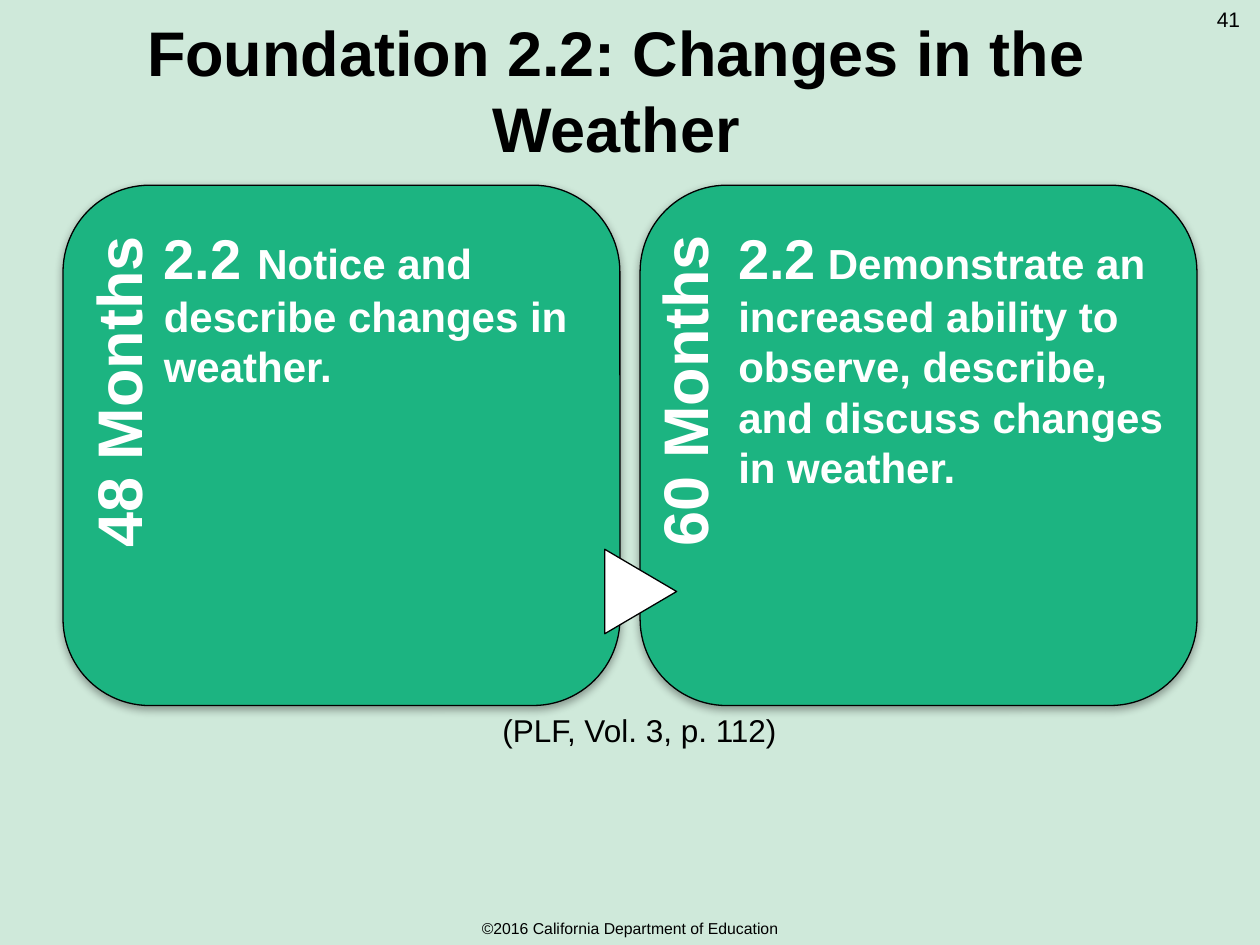
"""Build the slide on Foundation 2.2, comparing 48 and 60 months."""
from lxml import etree
from pptx import Presentation
from pptx.dml.color import RGBColor
from pptx.enum.shapes import MSO_SHAPE
from pptx.enum.text import MSO_ANCHOR, MSO_AUTO_SIZE, PP_ALIGN
from pptx.oxml.ns import qn
from pptx.util import Inches, Pt

ROUNDED, TRIANGLE = MSO_SHAPE.ROUNDED_RECTANGLE, MSO_SHAPE.FLOWCHART_EXTRACT
TOP, MIDDLE, BOTTOM = MSO_ANCHOR.TOP, MSO_ANCHOR.MIDDLE, MSO_ANCHOR.BOTTOM
LEFT, CENTER, RIGHT = PP_ALIGN.LEFT, PP_ALIGN.CENTER, PP_ALIGN.RIGHT
NO_AUTOFIT = MSO_AUTO_SIZE.NONE
COMPARISON_LAYOUT = 4
COLORS = {"background": "CFE9DA", "panel": "1CB481", "black": "000000", "white": "FFFFFF"}


def color(name):
    """Return the named palette colour."""
    return RGBColor.from_string(COLORS[name])


def place(shape, box, rotation=0):
    """Move, size and turn a shape, with the box in inches."""
    for name, value in zip(("left", "top", "width", "height"), box):
        setattr(shape, name, Inches(value))
    shape.rotation = rotation


def write(shape, runs, color_name="black", bold=False, align=LEFT, anchor=TOP, indent=0):
    """Fill a shape with one paragraph of (text, size) runs."""
    frame = shape.text_frame
    frame_format = {"word_wrap": True, "auto_size": NO_AUTOFIT, "vertical_anchor": anchor}
    for name, value in frame_format.items():
        setattr(frame, name, value)
    paragraph = frame.paragraphs[0]
    properties = paragraph._p.get_or_add_pPr()
    properties.set("marL", str(Inches(indent)))
    properties.set("indent", "0")
    etree.SubElement(properties, qn("a:buNone"))
    paragraph.alignment = align
    paragraph.space_before = Pt(0)
    for text, size in runs:
        run = paragraph.add_run()
        run.text = text
        for name, value in {"name": "Arial", "size": Pt(size), "bold": bold}.items():
            setattr(run.font, name, value)
        run.font.color.rgb = color(color_name)


def add_label(slide, text, size, box, anchor=TOP):
    """Add a centred text box."""
    label = slide.shapes.add_textbox(*map(Inches, box))
    write(label, [(text, size)], align=CENTER, anchor=anchor)


def add_figure(slide, kind, box, fill, rotation=0):
    """Add a filled preset shape with a thin black outline."""
    shape = slide.shapes.add_shape(kind, *map(Inches, box))
    shape.rotation = rotation
    shape.shadow.inherit = False
    shape.fill.solid()
    shape.fill.fore_color.rgb = color(fill)
    shape.line.color.rgb = color("black")
    shape.line.width = Pt(0.75)
    return shape


def add_panel(slide, left):
    """Add a rounded panel with a soft shadow, behind the placeholders."""
    panel = add_figure(slide, ROUNDED, (left, 1.47, 4.42, 4.13), "panel")
    effects = panel._element.spPr.find(qn("a:effectLst"))
    shadow = etree.SubElement(effects, qn("a:outerShdw"), blurRad=str(Pt(5)),
                              dist=str(Pt(1.8)), dir="5400000", rotWithShape="0")
    shade = etree.SubElement(shadow, qn("a:srgbClr"), val=COLORS["black"])
    etree.SubElement(shade, qn("a:alpha"), val="35000")
    slide.shapes._spTree.insert(2, panel._element)


def fill_column(heading, body, age, age_box, runs, body_box, indent=0):
    """Write a turned age heading and the foundation text beside it."""
    place(heading, age_box, 270)
    write(heading, [(age, 36)], "white", True, RIGHT, BOTTOM)
    place(body, body_box)
    write(body, runs, "white", True, indent=indent)


def main():
    """Build and save the slide."""
    presentation = Presentation()
    presentation.slide_width, presentation.slide_height = Inches(10), Inches(7.5)
    slide = presentation.slides.add_slide(presentation.slide_layouts[COMPARISON_LAYOUT])
    slide.background.fill.solid()
    slide.background.fill.fore_color.rgb = color("background")
    title, *columns = slide.placeholders

    for left in (0.5, 5.08):
        add_panel(slide, left)
    place(title, (0.28, 0, 9.22, 1.42))
    write(title, [("Foundation 2.2: Changes in the Weather", 36)],
          bold=True, align=CENTER, anchor=MIDDLE)
    fill_column(*columns[:2], "48 Months", (-0.55, 2.82, 2.88, 0.79),
                [("2.2 ", 32), ("Notice and describe changes in weather.", 24)],
                (1.2, 1.72, 3.72, 3.31))
    fill_column(*columns[2:], "60 Months", (3.98, 2.86, 2.89, 0.7),
                [("2.2", 32), (" Demonstrate an increased ability to observe, describe, "
                               "and discuss changes in weather.", 24)],
                (5.26, 1.72, 4.24, 3.88), indent=0.5)
    add_figure(slide, TRIANGLE, (4.75, 4.41, 0.67, 0.57), "white", 90)
    add_label(slide, "(PLF, Vol. 3, p. 112)", 18, (3.27, 5.59, 3.61, 0.4))
    add_label(slide, "41", 12, (9.5, 0, 0.5, 0.4))
    add_label(slide, "©2016 California Department of Education", 9,
              (0, 7.24, 10, 0.25), MIDDLE)
    presentation.save("out.pptx")


if __name__ == "__main__":
    main()
